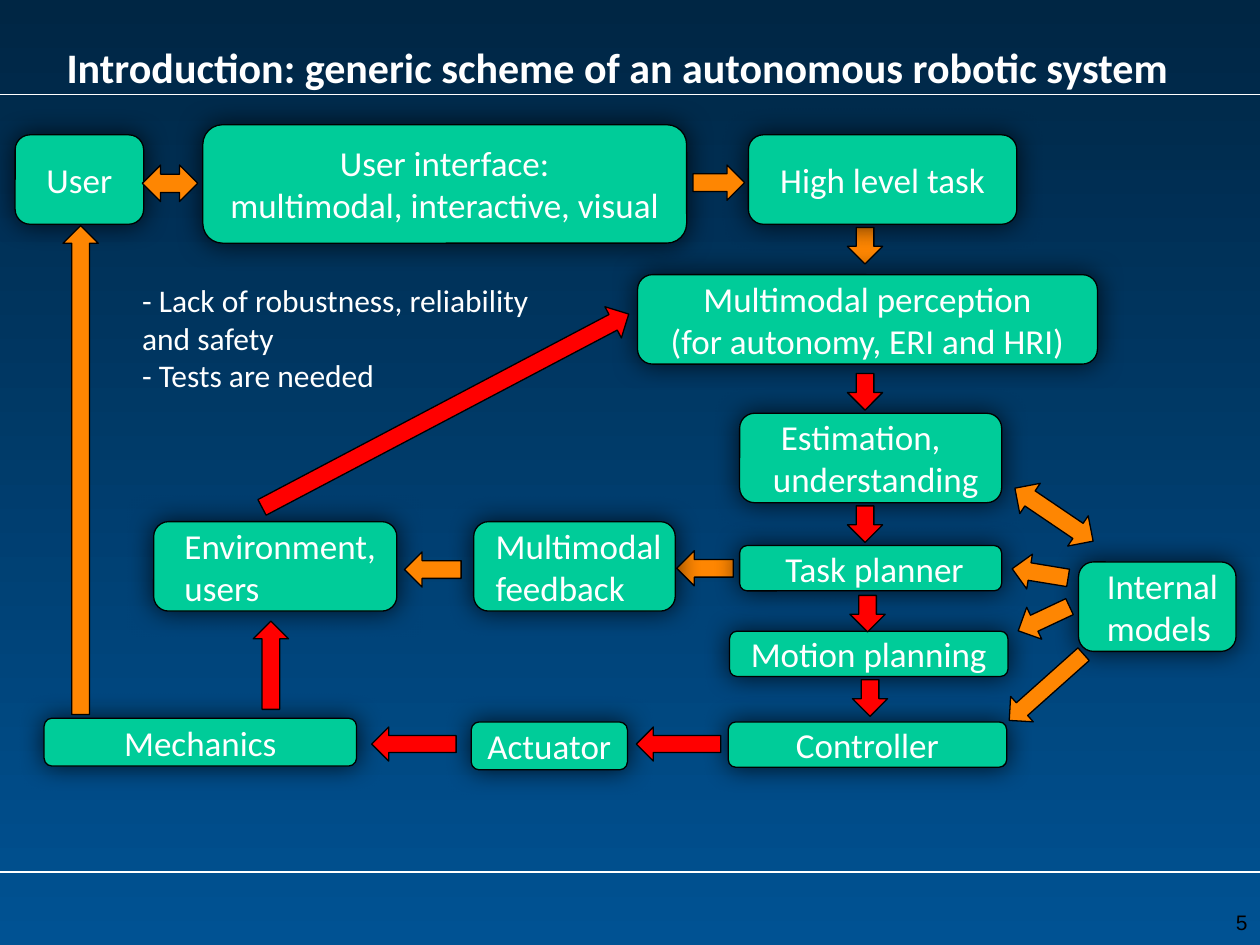
from lxml import etree
from pptx import Presentation
from pptx.dml.color import RGBColor
from pptx.enum.shapes import MSO_CONNECTOR, MSO_SHAPE
from pptx.enum.text import MSO_ANCHOR as ANCHOR, PP_ALIGN as ALIGN
from pptx.oxml import parse_xml
from pptx.oxml.ns import nsdecls, qn
from pptx.util import Inches, Pt

COLORS = {"top": "002644", "bottom": "005293", "white": "FFFFFF", "black": "000000",
          "box": "00CC99", "orange": "FE8602", "red": "FF0000"}
RGB = {name: RGBColor.from_string(value) for name, value in COLORS.items()}
GLOW = (f'<a:effectLst {nsdecls("a")}><a:outerShdw blurRad="190500" dist="0" algn="ctr">'
        '<a:srgbClr val="000000"><a:alpha val="75000"/></a:srgbClr>'
        '</a:outerShdw></a:effectLst>')

deck = Presentation()
deck.slide_width, deck.slide_height = Inches(10), Inches(7.5)
page = deck.slides.add_slide(deck.slide_layouts[6])

# Background gradient, dark at the top
backdrop = page.background.fill
backdrop.gradient()
backdrop.gradient_angle = 270
for stop, name in zip(backdrop.gradient_stops, ("top", "bottom")):
    stop.color.rgb = RGB[name]

# Header and footer rules
for y in (0.75, 6.92):
    rule = page.shapes.add_connector(MSO_CONNECTOR.STRAIGHT, 0, Inches(y), Inches(10), Inches(y))
    rule.line.color.rgb = RGB["white"]
    rule.line.width = Pt(0.75)
    etree.SubElement(rule._element.spPr, qn("a:effectLst"))


def write(shape, lines, align, anchor, color="white", **font):
    frame = shape.text_frame
    frame.word_wrap = True
    frame.vertical_anchor = anchor
    for index, line in enumerate(lines):
        para = frame.paragraphs[0] if index == 0 else frame.add_paragraph()
        para.alignment = align
        span = para.add_run()
        span.text = line
        span.font.color.rgb = RGB[color]
        for key, value in font.items():
            setattr(span.font, key, value)


def draw(preset, place, fill, rotation=0):
    shape = page.shapes.add_shape(preset, *map(Inches, place))
    shape.shadow.inherit = False
    shape.fill.solid()
    shape.fill.fore_color.rgb = RGB[fill]
    shape.line.color.rgb = RGB["black"]
    shape.line.width = Pt(0.75)
    shape.rotation = rotation
    return shape


# Title, remarks and page number
texts = [
    ((0.43, 0.11, 9.21, 0.67), ["Introduction: generic scheme of an autonomous robotic system"],
     ALIGN.LEFT, ANCHOR.BOTTOM, {"size": Pt(24), "name": "Calibri", "bold": True}),
    ((1.03, 2.18, 3.3, 1.01),
     ["- Lack of robustness, reliability", "and safety", "- Tests are needed"],
     ALIGN.LEFT, ANCHOR.TOP, {"size": Pt(18), "name": "Calibri"}),
    ((9.46, 7.17, 0.54, 0.33), ["5"],
     ALIGN.RIGHT, ANCHOR.TOP, {"size": Pt(12), "name": "Arial", "color": "black"}),
]
for place, lines, align, anchor, font in texts:
    write(page.shapes.add_textbox(*map(Inches, place)), lines, align, anchor, **font)

# Arrows that lie under the glow of the boxes
RIGHT, BOTH = MSO_SHAPE.RIGHT_ARROW, MSO_SHAPE.LEFT_RIGHT_ARROW
draw(RIGHT, (6.72, 1.81, 0.29, 0.28), "orange", 90)
draw(RIGHT, (5.37, 4.37, 0.45, 0.28), "orange", 180)

# Boxes: place, lines, left inset (None means centred text)
boxes = [
    ((0.12, 1.07, 1.02, 0.71), ["User"], None),
    ((1.61, 0.99, 3.84, 0.94), ["User interface:", "multimodal, interactive, visual"], None),
    ((5.94, 1.07, 2.13, 0.71), ["High level task"], None),
    ((5.06, 2.18, 3.65, 0.71), ["Multimodal perception", "(for autonomy, ERI and HRI)"], None),
    ((8.56, 4.46, 1.25, 0.71), ["Internal models"], 0.19),
    ((5.87, 3.28, 2.08, 0.71), [" Estimation, understanding"], 0.23),
    ((5.87, 4.33, 2.08, 0.36), [" Task planner"], None),
    ((5.79, 5.01, 2.21, 0.36), ["Motion planning"], None),
    ((5.78, 5.73, 2.21, 0.36), ["Controller"], None),
    ((3.74, 5.73, 1.24, 0.38), ["Actuator"], None),
    ((0.35, 5.7, 2.48, 0.38), ["Mechanics"], None),
    ((1.22, 4.14, 1.93, 0.71), ["Environment, users"], 0.21),
    ((3.76, 4.14, 1.6, 0.71), ["Multimodal feedback"], 0.14),
]
for place, lines, inset in boxes:
    box = draw(MSO_SHAPE.ROUNDED_RECTANGLE, place, "box")
    properties = box._element.spPr
    properties.replace(properties.find(qn("a:effectLst")), parse_xml(GLOW))
    frame = box.text_frame
    frame.margin_left = Inches(inset or 0)
    frame.margin_right = frame.margin_top = frame.margin_bottom = 0
    write(box, lines, ALIGN.LEFT if inset else ALIGN.CENTER, ANCHOR.MIDDLE,
          size=Pt(20), name="Calibri")

# Red chain down the right-hand column
for x, y in ((6.72, 2.97), (6.72, 4.02), (6.74, 4.73), (6.76, 5.4)):
    draw(RIGHT, (x, y, 0.29, 0.28), "red", 90)

# Red chain back along the bottom and up to perception
for x in (5.05, 2.95):
    draw(RIGHT, (x, 5.77, 0.67, 0.27), "red", 180)
draw(RIGHT, (1.8, 5.14, 0.7, 0.28), "red", 270)
draw(RIGHT, (1.89, 3.12, 3.29, 0.28), "red", 332.2)

# Orange links: user side, feedback and internal models
links = [
    (BOTH, (1.13, 1.31, 0.44, 0.29), 0),
    (RIGHT, (5.5, 1.31, 0.41, 0.28), 0),
    (RIGHT, (-1.3, 3.59, 3.88, 0.28), 270),
    (RIGHT, (3.21, 4.38, 0.45, 0.28), 180),
    (BOTH, (7.99, 3.94, 0.75, 0.29), 34.1),
    (RIGHT, (8.03, 4.41, 0.45, 0.28), 189.3),
    (RIGHT, (8.06, 4.77, 0.45, 0.28), 154.8),
    (RIGHT, (7.91, 5.32, 0.79, 0.27), 138.3),
]
for preset, place, rotation in links:
    draw(preset, place, "orange", rotation)

deck.save("out.pptx")
